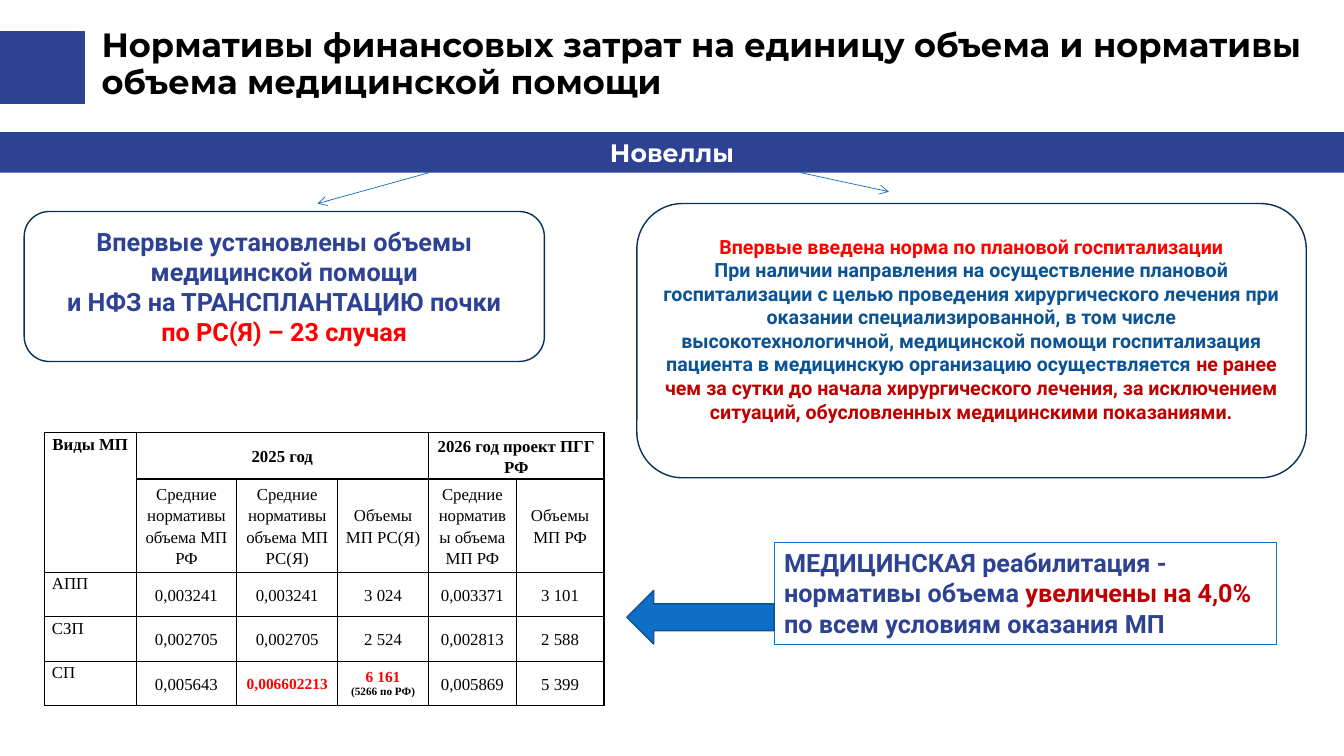
from lxml import etree
from pptx import Presentation
from pptx.dml.color import RGBColor
from pptx.enum.shapes import MSO_CONNECTOR, MSO_SHAPE
from pptx.enum.text import MSO_ANCHOR, PP_ALIGN
from pptx.oxml.ns import qn
from pptx.util import Cm, Pt

RECTANGLE, ROUNDED = MSO_SHAPE.RECTANGLE, MSO_SHAPE.ROUNDED_RECTANGLE
LEFT_ARROW, STRAIGHT = MSO_SHAPE.LEFT_ARROW, MSO_CONNECTOR.STRAIGHT
LEFT, CENTER = PP_ALIGN.LEFT, PP_ALIGN.CENTER
TOP, MIDDLE = MSO_ANCHOR.TOP, MSO_ANCHOR.MIDDLE

COLORS = {
    "navy": "2D4293", "outline": "073157", "blue": "0F6FC6",
    "arrow_line": "0B5292", "text_blue": "0B5394", "red": "FF0000",
    "dark_red": "C00000", "black": "000000", "white": "FFFFFF",
}
HEADING_FONT, BODY_FONT, TABLE_FONT = "Montserrat", "Roboto", "Times New Roman"

COLUMN_WIDTHS = [2.31, 2.54, 2.54, 2.29, 2.21, 2.21]
ROW_HEIGHTS = [1.17, 2.35, 1.12, 1.12, 1.12]
TABLE_ROWS = [
    ["Виды МП", "2025 год", "", "", "2026 год проект ПГГ РФ", ""],
    ["", "Средние нормативы объема МП РФ", "Средние нормативы объема МП РС(Я)",
     "Объемы МП РС(Я)", "Средние нормативы объема МП РФ", "Объемы МП РФ"],
    ["АПП", "0,003241", "0,003241", "3 024", "0,003371", "3 101"],
    ["СЗП", "0,002705", "0,002705", "2 524", "0,002813", "2 588"],
    ["СП", "0,005643", "0,006602213", "6\u00a0161", "0,005869", "5 399"],
]
MERGES = [((0, 0), (1, 0)), ((0, 1), (0, 3)), ((0, 4), (0, 5))]


def color(name):
    return RGBColor.from_string(COLORS[name])


def set_font(font, name, size, color_name, bold=True):
    font.name, font.size, font.bold = name, Pt(size), bold
    font.color.rgb = color(color_name)


def add_box(slide, kind, box, fill=None, line=None, line_width=1):
    shape = slide.shapes.add_shape(kind, *(Cm(value) for value in box))
    shape.shadow.inherit = False
    if fill:
        shape.fill.solid()
        shape.fill.fore_color.rgb = color(fill)
    else:
        shape.fill.background()
    if line:
        shape.line.color.rgb = color(line)
        shape.line.width = Pt(line_width)
    else:
        shape.line.fill.background()
    return shape


def write(shape, paragraphs, font_name, size, align=CENTER, anchor=MIDDLE):
    """Fill a shape with paragraphs, each a list of (text, color) runs."""
    frame = shape.text_frame
    frame.word_wrap = True
    frame.vertical_anchor = anchor
    for index, runs in enumerate(paragraphs):
        paragraph = frame.add_paragraph() if index else frame.paragraphs[0]
        paragraph.alignment = align
        set_font(paragraph.font, font_name, size, runs[0][1])
        for text, color_name in runs:
            run = paragraph.add_run()
            run.text = text
            run.font.color.rgb = color(color_name)
    return frame


def add_header(slide, left, top, width, height):
    add_box(slide, RECTANGLE, (left, top, 2.13, height), "navy", "navy")
    title = slide.shapes.add_textbox(Cm(left + 2.31), Cm(top - 0.02), Cm(width - 2.31), Cm(1.7))
    text = "Нормативы финансовых затрат на единицу объема и нормативы объема медицинской помощи"
    frame = write(title, [[(text, "black")]], HEADING_FONT, 24, LEFT)
    frame.paragraphs[0].line_spacing = 0.9


def add_thin_arrow(slide, *ends):
    connector = slide.shapes.add_connector(STRAIGHT, *(Cm(value) for value in ends))
    connector.line.color.rgb = color("blue")
    connector.line.width = Pt(0.5)
    properties = connector.line._get_or_add_ln()
    etree.SubElement(properties, qn("a:tailEnd"), type="arrow")
    etree.SubElement(connector._element.spPr, qn("a:effectLst"))


def add_banner(slide, left, top, width, height):
    banner = add_box(slide, RECTANGLE, (left, top, width, height), "navy")
    write(banner, [[("Новеллы", "white")]], HEADING_FONT, 18, anchor=TOP)
    bottom = top + height
    add_thin_arrow(slide, left + 20.17, bottom, left + 22.4, bottom + 0.48)
    add_thin_arrow(slide, left + 10.82, bottom, left + 8, bottom + 0.78)


def add_transplant_card(slide, *box):
    write(add_box(slide, ROUNDED, box, line="outline"), [
        [("Впервые установлены объемы медицинской помощи", "navy")],
        [("и НФЗ на ТРАНСПЛАНТАЦИЮ почки", "navy")],
        [("по РС(Я) – 23 случая", "red")],
    ], BODY_FONT, 18)


def add_hospital_card(slide, *box):
    frame = write(add_box(slide, ROUNDED, box, line="outline"), [
        [("Впервые введена норма по плановой госпитализации", "red")],
        [("При наличии направления на осуществление плановой госпитализации с целью "
          "проведения хирургического лечения при оказании специализированной, в том числе "
          "высокотехнологичной, медицинской помощи госпитализация пациента в медицинскую "
          "организацию осуществляется ", "text_blue"),
         ("не ранее чем за сутки до начала хирургического лечения, за исключением "
          "ситуаций, обусловленных медицинскими показаниями.", "dark_red")],
    ], BODY_FONT, 14)
    frame.margin_bottom = Cm(0.72)


def add_rehabilitation_note(slide, left, top, width, height):
    note = add_box(slide, RECTANGLE, (left, top, width, height), line="blue", line_width=0.75)
    write(note, [[
        ("МЕДИЦИНСКАЯ реабилитация - нормативы объема ", "navy"),
        ("увеличены на 4,0% ", "dark_red"),
        ("по всем условиям оказания МП", "navy"),
    ]], BODY_FONT, 18, LEFT, TOP)
    add_box(slide, LEFT_ARROW, (left - 3.71, top + 1.21, 3.71, 1.35), "blue", "arrow_line")


def set_borders(cell):
    properties = cell._tc.get_or_add_tcPr()
    for side in ("lnL", "lnR", "lnT", "lnB"):
        line = etree.SubElement(properties, qn(f"a:{side}"), w=str(Pt(1)))
        fill = etree.SubElement(line, qn("a:solidFill"))
        etree.SubElement(fill, qn("a:srgbClr"), val=COLORS["black"])


def format_cell(cell, text, row, column):
    set_borders(cell)
    cell.fill.solid()
    cell.fill.fore_color.rgb = color("white")
    cell.margin_left = cell.margin_right = Cm(0.19)
    cell.margin_top = cell.margin_bottom = 0
    cell.vertical_anchor = MIDDLE if column else TOP
    paragraph = cell.text_frame.paragraphs[0]
    paragraph.text = text
    paragraph.line_spacing = 1.15
    paragraph.alignment = CENTER if column or row < 2 else LEFT
    if row > 1 and column:
        paragraph.space_after = Pt(10)
    set_font(paragraph.font, TABLE_FONT, 12, "black", row == 0)


def add_volume_table(slide, left, top):
    frame = slide.shapes.add_table(
        len(ROW_HEIGHTS), len(COLUMN_WIDTHS), Cm(left), Cm(top),
        Cm(sum(COLUMN_WIDTHS)), Cm(sum(ROW_HEIGHTS)))
    table = frame.table
    table.first_row = table.horz_banding = False
    for column, width in zip(table.columns, COLUMN_WIDTHS):
        column.width = Cm(width)
    for row, height in zip(table.rows, ROW_HEIGHTS):
        row.height = Cm(height)
    for row, texts in enumerate(TABLE_ROWS):
        for column, text in enumerate(texts):
            format_cell(table.cell(row, column), text, row, column)
    for first, last in MERGES:
        table.cell(*first).merge(table.cell(*last))

    for column in (2, 3):
        set_font(table.cell(4, column).text_frame.paragraphs[0].font, TABLE_FONT, 11, "red")
    volume = table.cell(4, 3).text_frame
    note = volume.add_paragraph()
    note.text = "(5266 по РФ)"
    note.alignment = CENTER
    set_font(note.font, TABLE_FONT, 8, "black")
    volume.paragraphs[0].line_spacing = 1.0
    volume.paragraphs[0].space_after = Pt(0)


def main():
    presentation = Presentation()
    presentation.slide_width, presentation.slide_height = Cm(33.87), Cm(19.05)
    slide = presentation.slides.add_slide(presentation.slide_layouts[6])
    add_banner(slide, 0, 3.33, 33.87, 1.02)
    add_header(slide, 0, 0.81, 33.87, 1.8)
    add_transplant_card(slide, 0.61, 5.33, 13.11, 3.78)
    add_hospital_card(slide, 16.05, 5.13, 16.87, 6.91)
    add_rehabilitation_note(slide, 19.51, 13.67, 12.67, 2.57)
    add_volume_table(slide, 1.12, 10.9)
    presentation.save("out.pptx")


if __name__ == "__main__":
    main()
